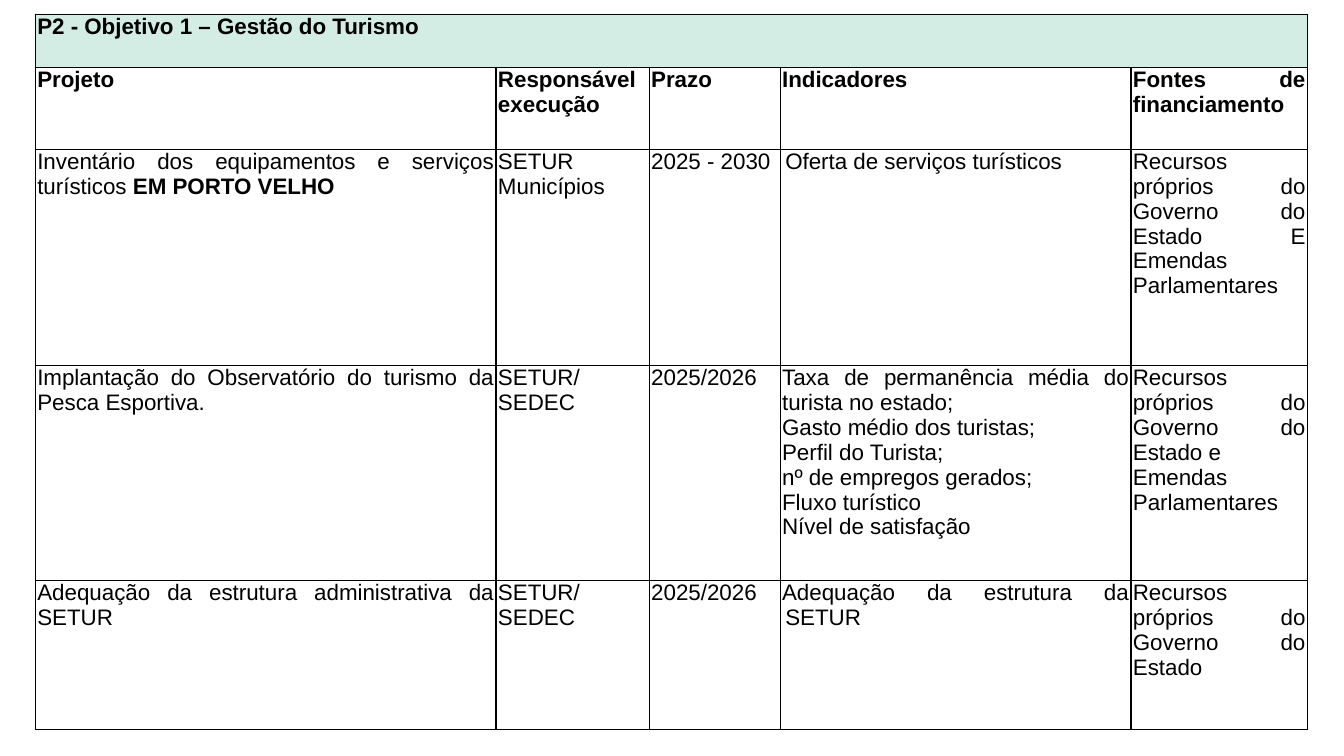
import pptx
import pptx.dml.color
import pptx.enum.text
import pptx.oxml
import pptx.oxml.ns
import pptx.util
from lxml import etree

Cm = pptx.util.Cm

TITLE = "P2 - Objetivo 1 – Gestão do Turismo"
HEADINGS = ["Projeto", "Responsável execução", "Prazo", "Indicadores", "Fontes de financiamento"]
PROJECTS = [
    [
        "Inventário dos equipamentos e serviços turísticos **EM PORTO VELHO",
        "SETUR\nMunicípios",
        "2025 - 2030",
        "Oferta de serviços turísticos",
        "Recursos próprios do Governo do Estado E Emendas Parlamentares",
    ],
    [
        "Implantação do Observatório do turismo da Pesca Esportiva.",
        "SETUR/\nSEDEC",
        "2025/2026",
        "Taxa de permanência média do turista no estado;\nGasto médio dos turistas;\n"
        "Perfil do Turista;\nnº de empregos gerados;\nFluxo turístico\nNível de satisfação",
        "Recursos próprios do Governo do Estado e\nEmendas Parlamentares",
    ],
    [
        "Adequação da estrutura administrativa da SETUR",
        "SETUR/\nSEDEC",
        "2025/2026",
        "Adequação da estrutura da SETUR",
        "Recursos próprios do Governo do Estado",
    ],
]
COLUMN_WIDTHS = [11.61, 3.86, 3.3, 8.84, 4.45]
ROW_HEIGHTS = [1.34, 2.06, 5.45, 5.41, 3.76]


def colour(value):
    return pptx.dml.color.RGBColor.from_string(value)


class SlideBuilder:
    font = "Arial"
    size = 16
    ink = "000000"
    banner = "D4EDE4"
    padding = 0.05

    def __init__(self, presentation):
        self.slide = presentation.slides.add_slide(presentation.slide_layouts[6])

    def table(self, left, top, widths, heights):
        shape = self.slide.shapes.add_table(
            len(heights), len(widths), Cm(left), Cm(top), Cm(sum(widths)), Cm(sum(heights)))
        table = shape.table
        table.first_row = table.horz_banding = False
        for column, width in zip(table.columns, widths):
            column.width = Cm(width)
        for row, height in zip(table.rows, heights):
            row.height = Cm(height)
        for cell in table.iter_cells():
            cell.margin_left = cell.margin_right = Cm(self.padding)
            cell.margin_top = cell.margin_bottom = 0
            self.borders(cell)
            cell.fill.background()
        return table

    def borders(self, cell):
        properties = cell._tc.get_or_add_tcPr()
        for side in ("lnL", "lnR", "lnT", "lnB"):
            line = etree.SubElement(properties, pptx.oxml.ns.qn("a:" + side), w="12700")
            fill = etree.SubElement(line, pptx.oxml.ns.qn("a:solidFill"))
            etree.SubElement(fill, pptx.oxml.ns.qn("a:srgbClr"), val=self.ink)

    def cell_text(self, cell, text, bold=False):
        frame = cell.text_frame
        frame.text = text.replace("**", "")
        for paragraph, line in zip(frame.paragraphs, text.split("\n")):
            paragraph.alignment = pptx.enum.text.PP_ALIGN.JUSTIFY
            plain, _, strong = line.partition("**")
            paragraph.text = plain
            self.style(paragraph.runs[0], bold)
            if strong:
                run = paragraph.add_run()
                run.text = strong
                self.style(run, True)

    def style(self, run, bold):
        run.font.name = self.font
        run.font.size = pptx.util.Pt(self.size)
        run.font.bold = bold
        run.font.color.rgb = colour(self.ink)

    def indent(self, cell, first_line):
        properties = cell.text_frame.paragraphs[0]._p.get_or_add_pPr()
        properties.set("marL", str(Cm(0.08)))
        properties.set("indent", str(Cm(first_line)))

    def fill(self, cell, value):
        cell.fill.solid()
        cell.fill.fore_color.rgb = colour(value)


def main():
    presentation = pptx.Presentation()
    presentation.slide_width = Cm(33.87)
    presentation.slide_height = Cm(19.05)
    builder = SlideBuilder(presentation)

    table = builder.table(0.89, 0.36, COLUMN_WIDTHS, ROW_HEIGHTS)
    banner = table.cell(0, 0)
    banner.merge(table.cell(0, len(HEADINGS) - 1))
    builder.fill(banner, builder.banner)
    builder.cell_text(banner, TITLE, bold=True)
    for row, texts in enumerate([HEADINGS] + PROJECTS, start=1):
        for column, text in enumerate(texts):
            builder.cell_text(table.cell(row, column), text, bold=row == 1)
    builder.indent(table.cell(2, 3), 0)
    builder.indent(table.cell(4, 3), -0.08)

    presentation.save("out.pptx")


if __name__ == "__main__":
    main()
